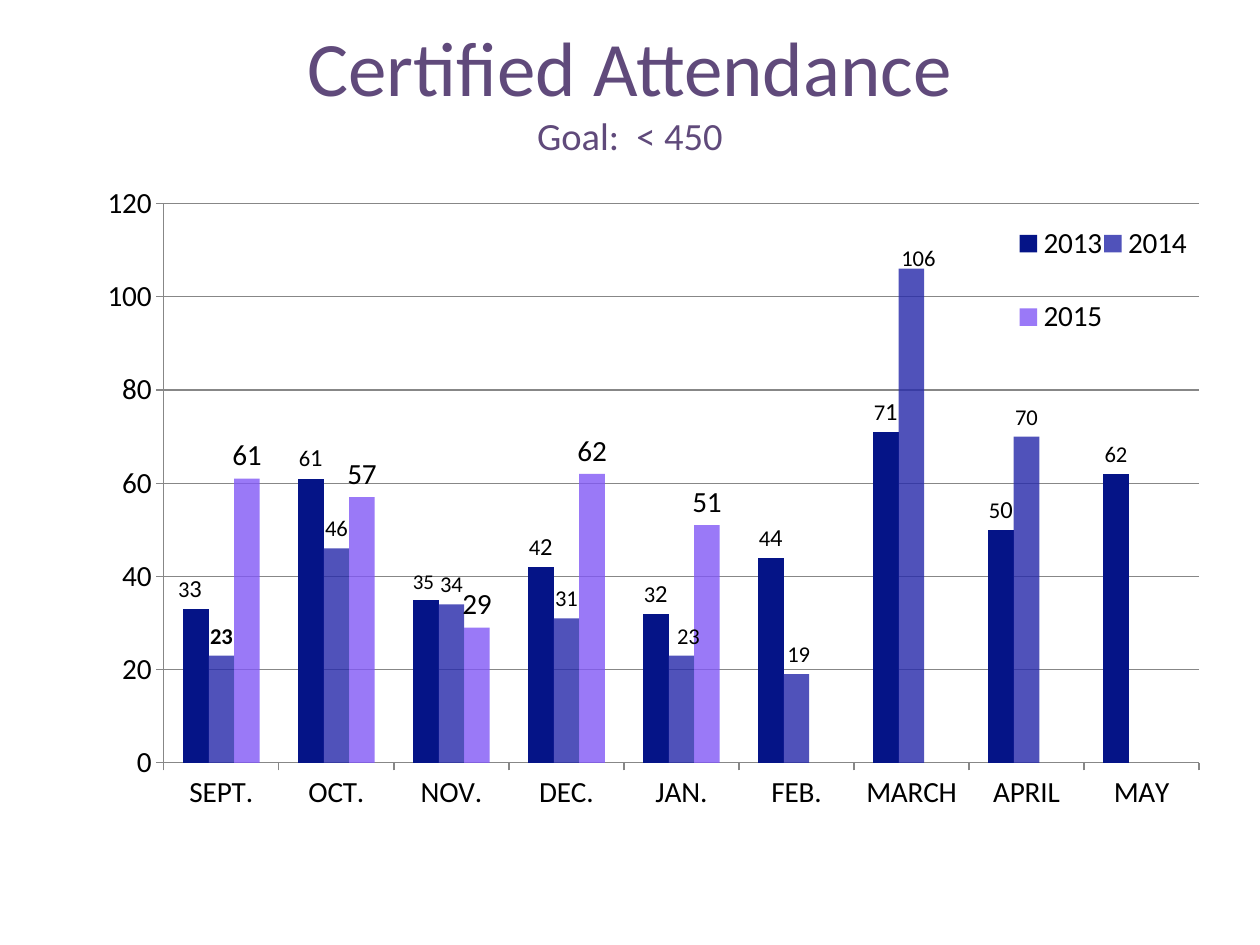
from dataclasses import dataclass

from lxml import etree
from pptx import Presentation, util as u
from pptx.chart.data import CategoryChartData
from pptx.dml.color import RGBColor
from pptx.enum import chart as ch, text
from pptx.oxml.ns import qn


@dataclass(frozen=True)
class Theme:
    font: str = "Calibri"
    title: str = "604A7B"
    ink: str = "000000"
    grid: str = "878787"
    title_size: float = 44
    goal_size: float = 22
    chart_size: float = 16.7
    label_size: float = 12.9
    small_label: float = 12
    large_digit: float = 14


THEME = Theme()
MONTHS = ["SEPT.", "OCT.", "NOV.", "DEC.", "JAN.", "FEB.", "MARCH", "APRIL", "MAY"]
# year, values, colour, opacity in percent, label size
YEARS = [
    ("2013", [33, 61, 35, 42, 32, 44, 71, 50, 62], "051487", 100, THEME.label_size),
    ("2014", [23, 46, 34, 31, 23, 19, 106, 70, None], "282BAA", 81, THEME.label_size),
    ("2015", [61, 57, 29, 62, 51, None, None, None, None], "8158F6", 80, THEME.chart_size),
]
# month index: label shift right and down, as shares of the chart size
SHIFTED_2013 = {0: (-0.005, 0), 2: (-0.002, 0)}
SHIFTED_2014 = {4: (0.006, 0), 5: (0.002, 0), 6: (0.006, 0.012)}
SMALL_LABEL_MONTH = 2


def style_font(font, size, color=THEME.ink, bold=False):
    font.name = THEME.font
    font.size = u.Pt(size)
    font.bold = bold
    font.color.rgb = RGBColor.from_string(color)


def add_title(slide, lines):
    box = slide.shapes.add_textbox(u.Inches(0.5), u.Inches(0.08), u.Inches(9), u.Inches(1.25))
    frame = box.text_frame
    frame.word_wrap = True
    frame.vertical_anchor = text.MSO_ANCHOR.MIDDLE
    para = frame.paragraphs[0]
    para.alignment = text.PP_ALIGN.CENTER
    for index, (words, size) in enumerate(lines):
        if index:
            para.add_line_break()
        span = para.add_run()
        span.text = words
        style_font(span.font, size, THEME.title)


def set_layout(parent, position, **settings):
    """Give a chart part a manual layout as its child at the given position."""
    for old in parent.findall(qn("c:layout")):
        parent.remove(old)
    layout = etree.Element(qn("c:layout"))
    manual = etree.SubElement(layout, qn("c:manualLayout"))
    for name, value in settings.items():
        etree.SubElement(manual, qn(f"c:{name}")).set("val", str(value))
    parent.insert(position, layout)


def style_series(series, color, opacity, label_size):
    fill = series.format.fill
    fill.solid()
    fill.fore_color.rgb = RGBColor.from_string(color)
    if opacity < 100:
        tint = series.format.fill._xPr.find(".//" + qn("a:srgbClr"))
        etree.SubElement(tint, qn("a:alpha")).set("val", str(opacity * 1000))
    series.invert_if_negative = False
    labels = series.data_labels
    labels.show_value = True
    labels.position = ch.XL_LABEL_POSITION.OUTSIDE_END
    style_font(labels.font, label_size)


def style_axes(chart):
    values = chart.value_axis
    values.minimum_scale, values.maximum_scale, values.major_unit = 0, 120, 20
    values.has_major_gridlines = True
    for axis in (chart.category_axis, values):
        axis.major_tick_mark = ch.XL_TICK_MARK.OUTSIDE
        style_font(axis.tick_labels.font, THEME.chart_size)
    for line in (values.major_gridlines.format.line, values.format.line,
                 chart.category_axis.format.line):
        line.color.rgb = RGBColor.from_string(THEME.grid)
        line.width = u.Pt(0.75)


def shift_labels(series, shifts):
    nodes = {int(node.find(qn("c:idx")).get("val")): node
             for node in series.data_labels._element.findall(qn("c:dLbl"))}
    for index, (right, down) in shifts.items():
        set_layout(nodes[index], 1, x=right, y=down)


def write_2013_labels(series):
    """Write each label but the last digit by digit, the second digit larger."""
    for index, value in enumerate(list(series.values)[:-1]):
        label = series.points[index].data_label
        para = label.text_frame.paragraphs[0]
        sizes = (THEME.label_size, THEME.large_digit)
        if index == SMALL_LABEL_MONTH:
            sizes = (THEME.small_label, THEME.small_label)
        for digit, size in zip(str(int(value)), sizes):
            span = para.add_run()
            span.text = digit
            style_font(span.font, size)
        label.position = ch.XL_LABEL_POSITION.OUTSIDE_END
    shift_labels(series, SHIFTED_2013)


def adjust_2014_labels(series):
    for index in (0, *SHIFTED_2014):
        label = series.points[index].data_label
        style_font(label.font, THEME.label_size, bold=index == 0)
        label.position = ch.XL_LABEL_POSITION.OUTSIDE_END
    shift_labels(series, SHIFTED_2014)


def add_attendance_chart(slide):
    data = CategoryChartData()
    data.categories = MONTHS
    for year, values, *_ in YEARS:
        data.add_series(year, values)
    chart = slide.shapes.add_chart(
        ch.XL_CHART_TYPE.COLUMN_CLUSTERED, u.Inches(0.42), u.Inches(1.42),
        u.Inches(9.17), u.Inches(5.92), data).chart
    style_font(chart.font, THEME.chart_size)
    chart.has_title = False
    plot = chart.plots[0]
    plot.gap_width, plot.overlap = 150, 0
    plot.vary_by_categories = False
    for series, (_, _, color, opacity, size) in zip(plot.series, YEARS):
        style_series(series, color, opacity, size)
    write_2013_labels(plot.series[0])
    adjust_2014_labels(plot.series[1])
    style_axes(chart)
    set_layout(plot._element.getparent(), 0, layoutTarget="inner", xMode="edge",
               yMode="edge", x=0.096, y=0.033, w=0.896, h=0.75)
    chart.has_legend = True
    legend = chart.legend
    legend.position = ch.XL_LEGEND_POSITION.RIGHT
    legend.include_in_layout = False
    style_font(legend.font, THEME.chart_size)
    set_layout(legend._element, 1, xMode="edge", yMode="edge",
               x=0.835, y=0.012, w=0.148, h=0.248)


def main():
    deck = Presentation()
    deck.slide_width, deck.slide_height = u.Inches(10), u.Inches(7.5)
    slide = deck.slides.add_slide(deck.slide_layouts[6])
    add_title(slide, [("Certified Attendance", THEME.title_size),
                      ("Goal:  < 450", THEME.goal_size)])
    add_attendance_chart(slide)
    deck.save("out.pptx")


if __name__ == "__main__":
    main()
